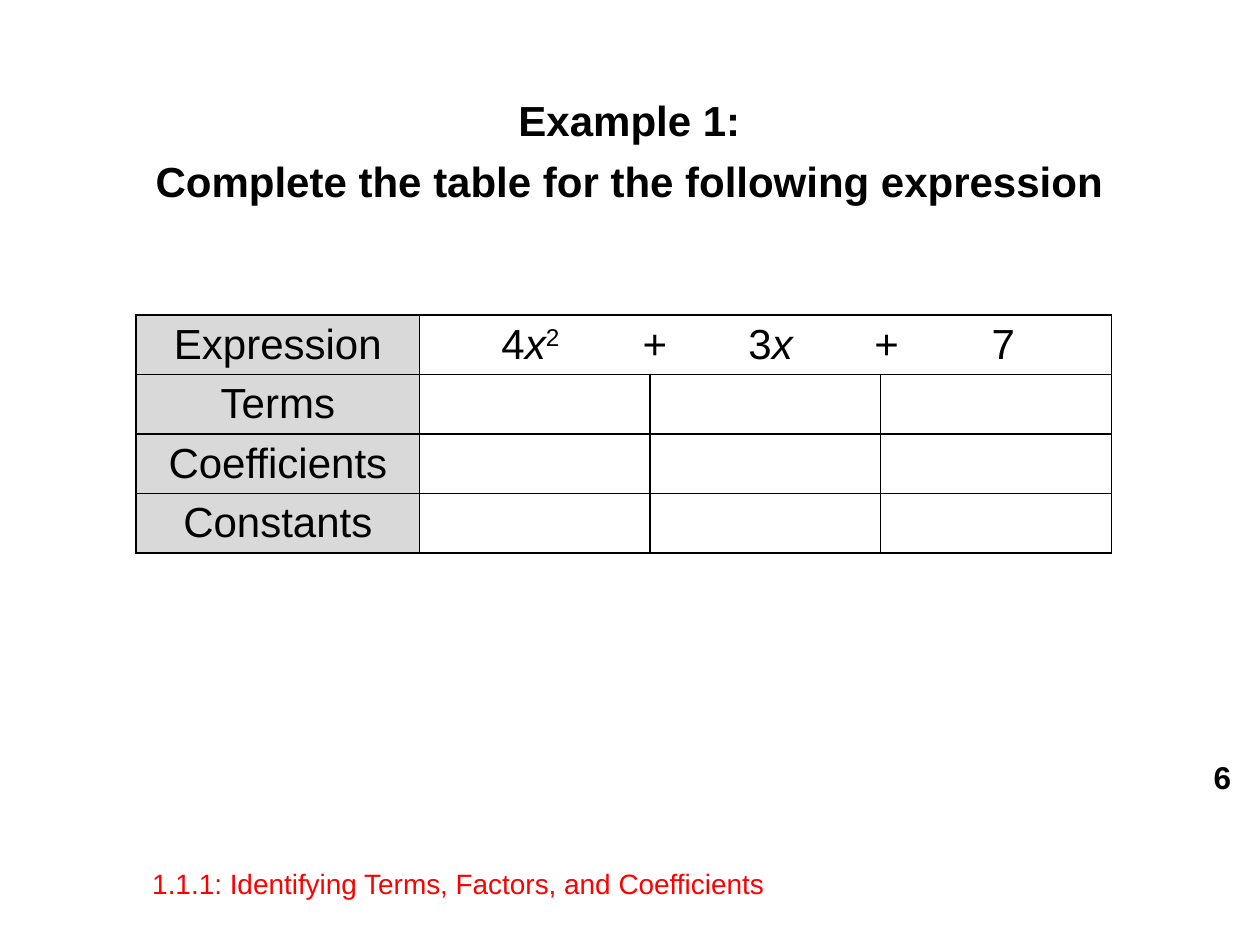
"""Build the Example 1 slide: a table of terms, coefficients and constants."""
from pptx import Presentation
from pptx import util as u
from pptx.dml.color import RGBColor
from pptx.enum import text
from pptx.oxml import parse_xml
from pptx.oxml.ns import nsdecls

BLACK = RGBColor(0x00, 0x00, 0x00)
RED = RGBColor(0xFF, 0x00, 0x00)
GREY = RGBColor(0xD9, 0xD9, 0xD9)
WHITE = RGBColor(0xFF, 0xFF, 0xFF)

TITLE = ["Example 1:", "Complete the table for the following expression"]
LABELS = ["Expression", "Terms", "Coefficients", "Constants"]
EXPRESSION = [("\t4", ""), ("x", "italic"), ("2", "super"), ("\t+\t3", ""),
              ("x", "italic"), ("\t+\t7", "")]
EXPRESSION_TABS = [0.55, 1.67, 2.51, 3.51, 4.44]
SECTION = "1.1.1: Identifying Terms, Factors, and Coefficients"
PAGE = "6"
COLUMNS = [2.25, 1.83, 1.83, 1.83]
ROW_HEIGHT = 0.47
CENTER, RIGHT, LEFT = text.PP_ALIGN.CENTER, text.PP_ALIGN.RIGHT, text.PP_ALIGN.LEFT


def write(p, content, size=24, color=BLACK, bold=False, align=CENTER):
    p.alignment = align
    runs = [(content, "")] if isinstance(content, str) else content
    for words, style in runs:
        r = p.add_run()
        r.text = words
        r.font.name, r.font.size, r.font.bold = "Arial", u.Pt(size), bold
        r.font.italic = style == "italic"
        r.font.color.rgb = color
        if style == "super":
            r.font._element.set("baseline", "30000")


def set_tabs(p, stops):
    tabs = "".join(f'<a:tab pos="{u.Inches(x)}" algn="l"/>' for x in stops)
    p._p.get_or_add_pPr().append(
        parse_xml(f'<a:tabLst {nsdecls("a")}>{tabs}</a:tabLst>'))


def format_cell(cell, fill):
    cell.fill.solid()
    cell.fill.fore_color.rgb = fill
    cell.vertical_anchor = text.MSO_ANCHOR.MIDDLE
    tc_pr = cell._tc.get_or_add_tcPr()
    for i, side in enumerate(["lnL", "lnR", "lnT", "lnB"]):
        tc_pr.insert(i, parse_xml(
            f'<a:{side} {nsdecls("a")} w="{u.Pt(1)}"><a:solidFill>'
            f'<a:srgbClr val="{BLACK}"/></a:solidFill></a:{side}>'))


def add_title(s):
    sp = s.shapes.title
    sp.left, sp.top, sp.width, sp.height = map(u.Inches, (0.7, 0.7, 8.59, 5.47))
    tf = sp.text_frame
    tf.word_wrap = True
    tf.auto_size = text.MSO_AUTO_SIZE.NONE
    tf.vertical_anchor = text.MSO_ANCHOR.TOP
    for i, line in enumerate(TITLE):
        p = tf.add_paragraph() if i else tf.paragraphs[0]
        p.space_before = u.Pt(5.8 if i else 0)
        write(p, line, bold=True)


def add_expression_table(s):
    table = s.shapes.add_table(
        len(LABELS), len(COLUMNS), u.Inches(1.08), u.Inches(2.5),
        u.Inches(sum(COLUMNS)), u.Inches(ROW_HEIGHT * len(LABELS))).table
    table.first_row = table.horz_banding = False
    for column, width in zip(table.columns, COLUMNS):
        column.width = u.Inches(width)
    for i, label in enumerate(LABELS):
        table.rows[i].height = u.Inches(ROW_HEIGHT)
        for j in range(len(COLUMNS)):
            format_cell(table.cell(i, j), WHITE if j else GREY)
        write(table.cell(i, 0).text_frame.paragraphs[0], label)
    table.cell(0, 1).merge(table.cell(0, 3))
    p = table.cell(0, 1).text_frame.paragraphs[0]
    set_tabs(p, EXPRESSION_TABS)
    write(p, EXPRESSION, align=LEFT)


def add_label(s, box, content, anchor, **fmt):
    tf = s.shapes.add_textbox(*map(u.Inches, box)).text_frame
    tf.word_wrap = True
    tf.vertical_anchor = anchor
    write(tf.paragraphs[0], content, **fmt)


def main():
    prs = Presentation()
    prs.slide_width, prs.slide_height = u.Inches(10), u.Inches(7.5)
    s = prs.slides.add_slide(prs.slide_layouts[5])
    add_title(s)
    add_expression_table(s)
    add_label(s, (9.07, 6.01, 0.8, 0.31), PAGE, text.MSO_ANCHOR.MIDDLE,
              size=18, bold=True, align=RIGHT)
    add_label(s, (1.11, 6.83, 6.05, 0.29), SECTION, text.MSO_ANCHOR.TOP,
              size=16, color=RED, align=LEFT)
    prs.save("out.pptx")


if __name__ == "__main__":
    main()
